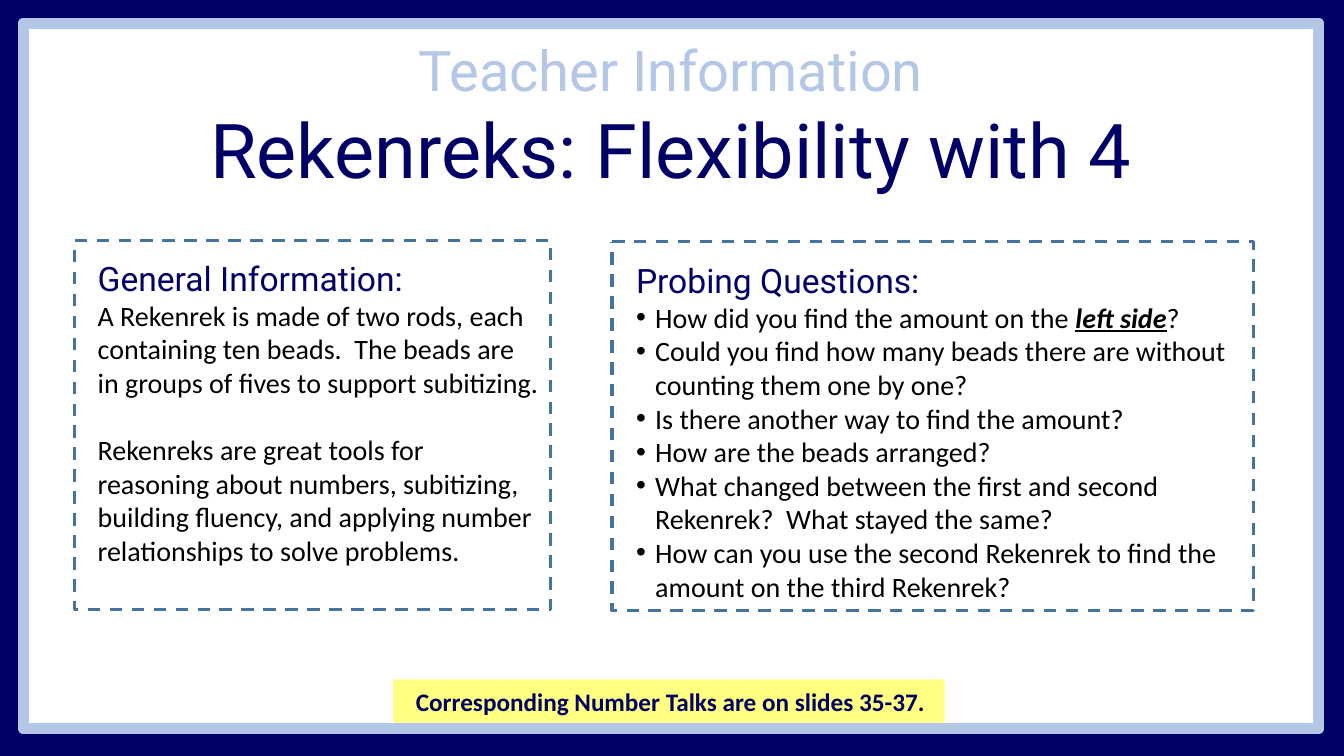
from pptx import Presentation
from pptx.dml.color import RGBColor
from pptx.enum.dml import MSO_LINE
from pptx.enum.shapes import MSO_SHAPE
from pptx.enum.text import MSO_ANCHOR, PP_ALIGN
from pptx.oxml.ns import qn
from pptx.util import Inches, Pt
from lxml import etree

RECT, ROUNDED = MSO_SHAPE.RECTANGLE, MSO_SHAPE.ROUNDED_RECTANGLE
TOP, MIDDLE = MSO_ANCHOR.TOP, MSO_ANCHOR.MIDDLE
CENTER, LEFT = PP_ALIGN.CENTER, PP_ALIGN.LEFT
DASH = MSO_LINE.DASH
COLORS = {"navy": "000066", "pale": "B4C7E7", "white": "FFFFFF",
          "yellow": "FFFF81", "steel": "43739E", "black": "000000"}
HEADING = {"name": "Roboto", "size": Pt(24), "color": "navy"}
BODY = {"name": "Calibri", "size": Pt(20), "color": "black"}


def add_box(kind, place, fill=None, line=None, width=0):
    box = slide.shapes.add_shape(kind, *[Inches(n) for n in place])
    box.shadow.inherit = False
    if fill:
        box.fill.solid()
        box.fill.fore_color.rgb = RGBColor.from_string(COLORS[fill])
    else:
        box.fill.background()
    if line:
        box.line.color.rgb = RGBColor.from_string(COLORS[line])
        box.line.width = Pt(width)
    else:
        box.line.fill.background()
    return box


def add_run(paragraph, text, style, align=LEFT):
    paragraph.alignment = align
    run = paragraph.add_run()
    run.text = text
    for key, value in style.items():
        if key == "color":
            run.font.color.rgb = RGBColor.from_string(COLORS[value])
        else:
            setattr(run.font, key, value)


prs = Presentation()
prs.slide_width, prs.slide_height = Inches(13.33), Inches(7.5)
slide = prs.slides.add_slide(prs.slide_layouts[5])
title = slide.shapes.title

# Background and page frame, which lies behind the title
slide.background.fill.solid()
slide.background.fill.fore_color.rgb = RGBColor.from_string(COLORS["navy"])
page = add_box(RECT, (0.23, 0.23, 12.85, 7), "white", "pale", 8)
title._element.addprevious(page._element)

# Title
title.left, title.top, title.width, title.height = [
    Inches(n) for n in (0.23, 0.3, 12.85, 1.68)]
title_frame = title.text_frame
title_frame.vertical_anchor = TOP
add_run(title_frame.paragraphs[0], "Teacher Information",
        {"name": "Roboto", "size": Pt(40), "color": "pale"}, CENTER)
add_run(title_frame.add_paragraph(), "Rekenreks: Flexibility with 4",
        {"name": "Roboto", "size": Pt(54), "color": "navy"}, CENTER)

# Note on the matching slides
note = add_box(RECT, (3.9, 6.74, 5.47, 0.43), "yellow")
note.text_frame.vertical_anchor = MIDDLE
note.text_frame.margin_left = Inches(0.13)
add_run(note.text_frame.paragraphs[0],
        "Corresponding Number Talks are on slides 35-37.",
        {"name": "Calibri", "size": Pt(18), "color": "navy", "bold": True}, CENTER)

# Two panels: dashed border, text area, heading, paragraphs, bulleted or not
panels = [
    ((0.74, 2.39, 4.72, 3.66), (0.87, 2.51, 4.59, 3.2), "General Information:", [
        "A Rekenrek is made of two rods, each containing ten beads.  "
        "The beads are in groups of fives to support subitizing.",
        "Rekenreks are great tools for reasoning about numbers, subitizing, "
        "building fluency, and applying number relationships to solve problems.",
    ], False),
    ((6.07, 2.4, 6.36, 3.66), (6.21, 2.53, 6.18, 3.53), "Probing Questions:", [
        "How did you find the amount on the *left side*?",
        "Could you find how many beads there are without counting them one by one?",
        "Is there another way to find the amount?",
        "How are the beads arranged?",
        "What changed between the first and second Rekenrek?  What stayed the same?",
        "How can you use the second Rekenrek to find the amount on the third Rekenrek?",
    ], True),
]
for border_place, text_place, heading, items, bulleted in panels:
    border = add_box(ROUNDED, border_place, None, "steel", 2.25)
    border.adjustments[0] = 0
    border.line.dash_style = DASH

    frame = slide.shapes.add_textbox(*[Inches(n) for n in text_place]).text_frame
    frame.word_wrap = True
    add_run(frame.paragraphs[0], heading, HEADING)
    for index, item in enumerate(items):
        paragraph = frame.add_paragraph()
        if bulleted:
            props = paragraph._p.get_or_add_pPr()
            props.set("marL", str(Inches(0.19)))
            props.set("indent", str(Inches(-0.19)))
            etree.SubElement(props, qn("a:buFont")).set("typeface", "Arial")
            etree.SubElement(props, qn("a:buChar")).set("char", "•")
        elif index:
            paragraph.space_before = Pt(24)
        # Words between asterisks are emphasised
        for part, text in enumerate(item.split("*")):
            strong = {"bold": True, "italic": True, "underline": True} if part % 2 else {}
            add_run(paragraph, text, {**BODY, **strong})

prs.save("out.pptx")
